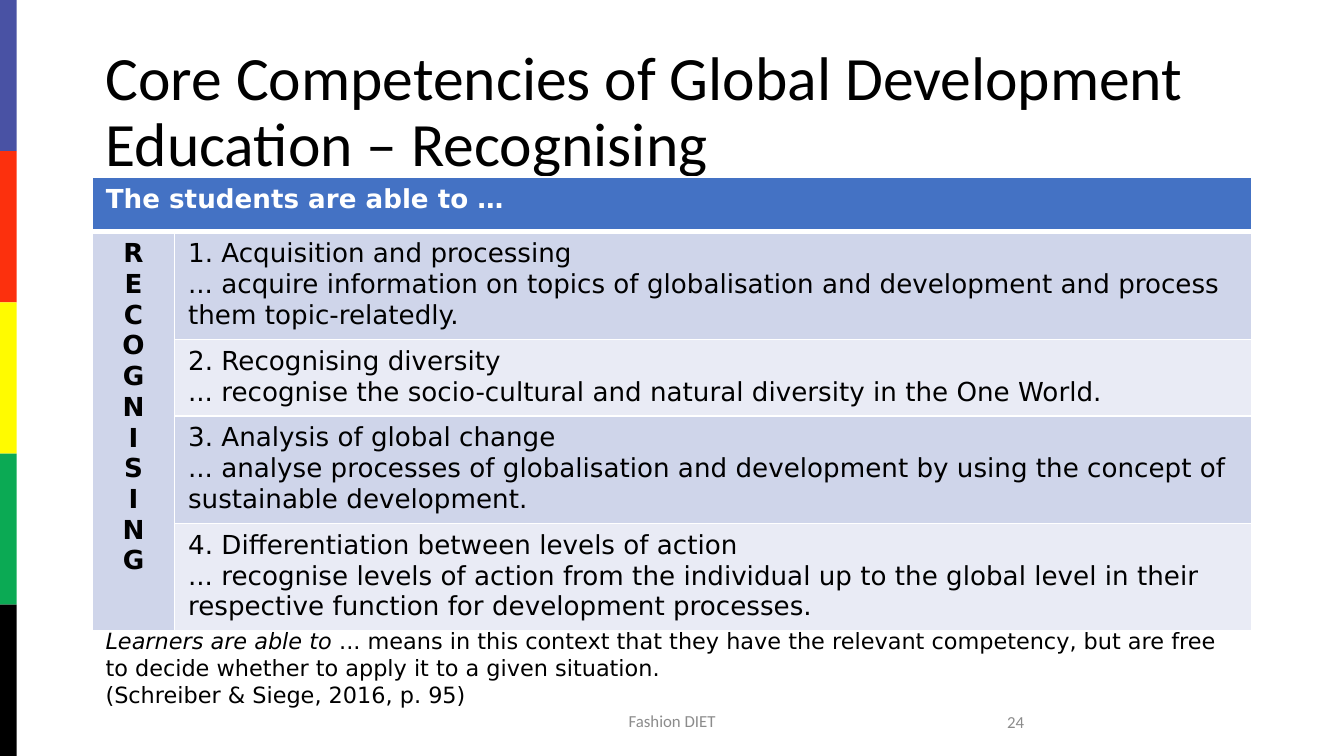
from lxml import etree
from pptx import Presentation
from pptx import util as u
from pptx.dml.color import RGBColor
from pptx.enum import shapes, text
from pptx.oxml.ns import qn

UNIT = u.Inches(10) / 160
INK = {"black": "000000", "white": "FFFFFF", "gray": "8C8C8C",
       "head": "4472C4", "dark": "CFD5EA", "light": "E9EBF5"}
STRIPES = {"blue": "4952A4", "red": "FC300D", "yellow": "FFFB00",
           "green": "0BAA54", "black": "000000"}
SANS = "DejaVu Sans"
ROWS = (6.5, 10.9, 9.1, 12.8, 12.8)
SKILLS = (
    "1. Acquisition and processing\v... acquire information on topics of "
    "globalisation and development and process them topic-relatedly.",
    "2. Recognising diversity\v... recognise the socio-cultural and natural "
    "diversity in the One World.",
    "3. Analysis of global change\v... analyse processes of globalisation and "
    "development by using the concept of sustainable development.",
    "4. Differentiation between levels of action\n... recognise levels of action "
    "from the individual up to the global level in their respective function "
    "for development processes.",
)


def grid(*nums):
    """Turn grid units into slide lengths."""
    return [u.Emu(round(n * UNIT)) for n in nums]


def style(frame, size, face, color, align=None, bold=False):
    """Format every run in a text frame."""
    for para in frame.paragraphs:
        para.alignment = align
        for run in para.runs:
            font = run.font
            font.size, font.name, font.bold = u.Pt(size), face, bold
            font.color.rgb = RGBColor.from_string(INK[color])


def write(slide, box, words, size, face, color, align=None,
          anchor=text.MSO_ANCHOR.MIDDLE):
    """Place a wrapped text box and return its frame."""
    frame = slide.shapes.add_textbox(*grid(*box)).text_frame
    frame.word_wrap = True
    frame.vertical_anchor = anchor
    frame.text = words
    style(frame, size, face, color, align)
    return frame


def stripes(slide, box):
    """Stack the colour bars evenly down the box."""
    left, top, width, height = box
    step = height / len(STRIPES)
    for i, color in enumerate(STRIPES.values()):
        bar = slide.shapes.add_shape(shapes.MSO_SHAPE.RECTANGLE,
                                     *grid(left, top + i * step, width, step))
        bar.shadow.inherit = False
        bar.fill.solid()
        bar.fill.fore_color.rgb = RGBColor.from_string(color)
        bar.line.fill.background()


def title(slide, box):
    """Place the heading."""
    frame = write(slide, box, "Core Competencies of Global Development "
                  "Education – Recognising", 33, "Calibri", "black")
    frame.paragraphs[0].line_spacing = 0.9


def paint(cell, color, top, bottom):
    """Give a cell white borders and a fill."""
    props = cell._tc.get_or_add_tcPr()
    for side, width in zip("LRTB", (1, 1, top, bottom)):
        line = etree.SubElement(props, qn("a:ln" + side), w=str(u.Pt(width)))
        fill = etree.SubElement(line, qn("a:solidFill"))
        etree.SubElement(fill, qn("a:srgbClr"), val=INK["white"])
    cell.fill.solid()
    cell.fill.fore_color.rgb = RGBColor.from_string(INK[color])


def skills(slide, box):
    """Build the competency table with its merged header and side."""
    left, top, width, _ = box
    table = slide.shapes.add_table(
        len(ROWS), 2, *grid(left, top, width, sum(ROWS))).table
    side = 9.8
    for col, size in zip(table.columns, grid(side, width - side)):
        col.width = size
    for row, size in zip(table.rows, grid(*ROWS)):
        row.height = size
    for r in range(len(ROWS)):
        for c in range(2):
            color = "head" if r == 0 else "dark" if c == 0 or r % 2 else "light"
            paint(table.cell(r, c), color, 3 if r == 1 else 1, 3 if r == 0 else 1)
    head, spine = table.cell(0, 0), table.cell(1, 0)
    head.merge(table.cell(0, 1))
    spine.merge(table.cell(len(ROWS) - 1, 0))
    head.text_frame.text = "The students are able to …"
    style(head.text_frame, 14, SANS, "white", bold=True)
    spine.text_frame.text = "\n".join("RECOGNISING")
    style(spine.text_frame, 14, SANS, "black", text.PP_ALIGN.CENTER, True)
    for r, words in enumerate(SKILLS, 1):
        frame = table.cell(r, 1).text_frame
        frame.text = words
        style(frame, 14, SANS, "black")


def note(slide, box):
    """Place the remark and its source below the table."""
    frame = write(slide, box, "Learners are able to\n"
                  "(Schreiber & Siege, 2016, p. 95)", 12, SANS, "black",
                  anchor=text.MSO_ANCHOR.TOP)
    first = frame.paragraphs[0]
    first.add_run().text = (" ... means in this context that they have the relevant "
                            "competency, but are free to decide whether to apply "
                            "it to a given situation.")
    style(frame, 12, SANS, "black")
    first.runs[0].font.italic = True


def footer(slide, box):
    """Place the project name and the page number."""
    left, top, width, height = box
    write(slide, (left, top, 54, height), "Fashion DIET", 9, "Calibri", "gray",
          text.PP_ALIGN.CENTER)
    write(slide, (left + width - 36, top + 0.1, 36, height), "24", 9, "Calibri",
          "gray", text.PP_ALIGN.RIGHT)


def main():
    """Build and save the slide."""
    deck = Presentation()
    deck.slide_width, deck.slide_height = grid(160, 90)
    slide = deck.slides.add_slide(deck.slide_layouts[6])
    stripes(slide, (0, 0, 2, 90))
    title(slide, (11, 4.8, 138, 17.4))
    footer(slide, (53, 83.4, 70.5, 4.8))
    skills(slide, (11, 21.1, 138, 53.9))
    note(slide, (11, 73.9, 138, 11.4))
    deck.save("out.pptx")


if __name__ == "__main__":
    main()
